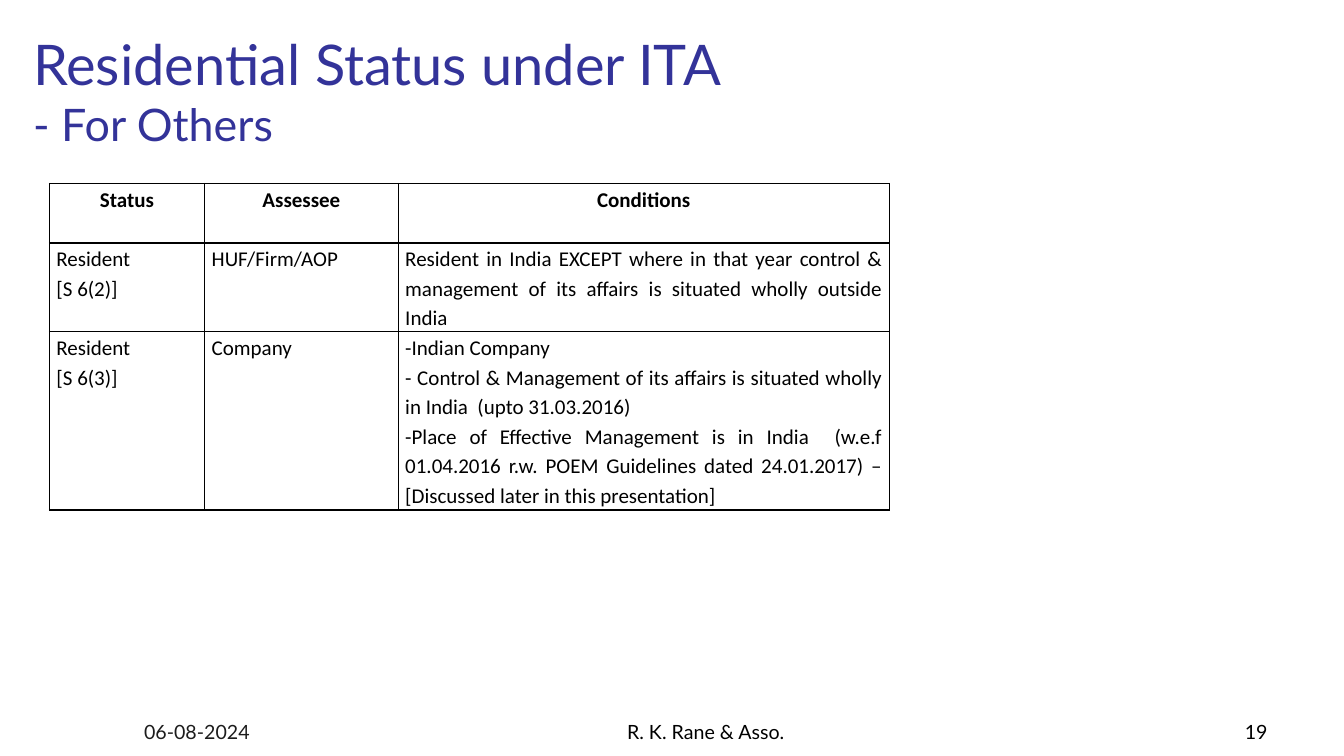
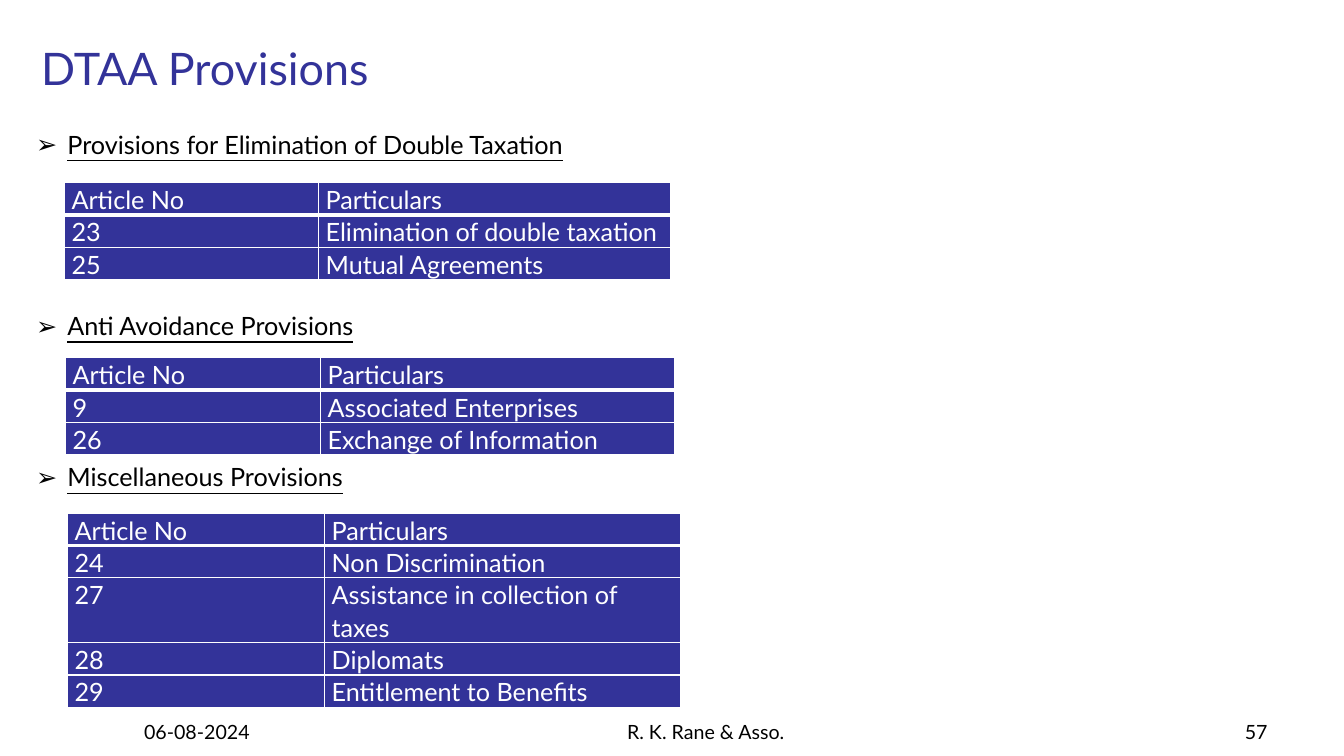
from lxml import etree
from pptx import Presentation
from pptx.dml.color import RGBColor
from pptx.enum.text import MSO_ANCHOR, PP_ALIGN
from pptx.oxml.ns import qn
from pptx.util import Pt

PX = 9144
LEFT, MID, RIGHT, FULL = PP_ALIGN.LEFT, PP_ALIGN.CENTER, PP_ALIGN.RIGHT, PP_ALIGN.JUSTIFY
TOP, BASE = MSO_ANCHOR.TOP, MSO_ANCHOR.BOTTOM


class Theme:
    blue = "333399"
    black = "000000"
    dark = "1C1C1C"
    white = "FFFFFF"
    font = "Lato"
    plain = "Calibri"
    title = 40
    sub = 32
    body = 18
    cell = 15
    foot = 14


def write(frame, text, size, ink, align=LEFT, font=Theme.font, bold=False, space=None, mark=""):
    frame.text = text
    for para in frame.paragraphs:
        para.alignment = align
        if space:
            para.line_spacing = space
        if mark:
            props = para._p.get_or_add_pPr()
            etree.SubElement(props, qn("a:buFont"), typeface=font)
            etree.SubElement(props, qn("a:buChar"), char=mark)
        for run in para.runs:
            run.font.size = Pt(size)
            run.font.name = font
            run.font.bold = bold
            run.font.color.rgb = RGBColor.from_string(ink)


def grid(slide, left, top, cols, rows, cells, line, base, fill=None, **style):
    shape = slide.shapes.add_table(len(rows), len(cols), left * PX, top * PX,
                                   sum(cols) * PX, sum(rows) * PX)
    table = shape.table
    table.first_row = table.horz_banding = False
    for col, wide in zip(table.columns, cols):
        col.width = wide * PX
    for row, high in zip(table.rows, rows):
        row.height = high * PX
    for r, texts in enumerate(cells):
        for c, text in enumerate(texts):
            cell = table.cell(r, c)
            cell.margin_left = cell.margin_right = 7 * PX
            cell.margin_top = cell.margin_bottom = 0
            props = cell._tc.get_or_add_tcPr()
            for side in "LRTB":
                heavy = side == "B" and r == 0 or side == "T" and r == 1
                edge = etree.SubElement(props, qn("a:ln" + side),
                                        w=str(Pt(base if heavy else 1)))
                paint = etree.SubElement(edge, qn("a:solidFill"))
                etree.SubElement(paint, qn("a:srgbClr"), val=line)
            if fill:
                cell.fill.solid()
                cell.fill.fore_color.rgb = RGBColor.from_string(fill)
            else:
                cell.fill.background()
            write(cell.text_frame, text, **style)
    return table


deck = Presentation()
deck.slide_width, deck.slide_height = 1333 * PX, 750 * PX
blank = deck.slide_layouts[6]

pages = [
    ("19", Theme.dark, (23, 24, 1244, 142), "Residential Status under ITA\n- For Others", Theme.title),
    ("57", Theme.black, (31, 35, 575, 58), "DTAA Provisions", Theme.sub),
]
slides = []
for num, ink, spot, title, size in pages:
    slide = deck.slides.add_slide(blank)
    slides.append(slide)
    boxes = [
        (spot, title, size, Theme.blue, LEFT, TOP),
        ((133, 692, 278, 50), "06-08-2024", Theme.foot, ink, LEFT, BASE),
        ((489, 692, 422, 50), "R. K. Rane & Asso.", Theme.foot, Theme.black, MID, BASE),
        ((989, 692, 278, 50), num, Theme.foot, Theme.black, RIGHT, BASE),
    ]
    for place, text, size, tint, align, anchor in boxes:
        frame = slide.shapes.add_textbox(*[n * PX for n in place]).text_frame
        frame.word_wrap = True
        frame.vertical_anchor = anchor
        write(frame, text, size, tint, align)

status, treaty = slides

head = status.shapes[0].text_frame
head.paragraphs[1].runs[0].font.size = Pt(Theme.sub)

rules = [
    ("Status", "Assessee", "Conditions"),
    ("Resident\n[S 6(2)]", "HUF/Firm/AOP",
     "Resident in India EXCEPT where in that year control & management of its affairs "
     "is situated wholly outside India"),
    ("Resident\n[S 6(3)]", "Company", ""),
]
tests = (
    "Indian Company\n"
    " Control & Management of its affairs is situated wholly in India  (upto 31.03.2016)\n"
    "Place of Effective Management is in India  (w.e.f 01.04.2016 r.w. POEM Guidelines "
    "dated 24.01.2017) – [Discussed later in this presentation]"
)
look = dict(size=Theme.cell, ink=Theme.black, font=Theme.plain, space=1.15)
table = grid(status, 49, 182, (154, 192, 487), (59, 88, 177), rules,
             Theme.black, 1, align=FULL, **look)
for c, text in enumerate(rules[0]):
    write(table.cell(0, c).text_frame, text, align=MID, bold=True, **look)
write(table.cell(2, 2).text_frame, tests, align=FULL, mark="-", **look)

parts = [
    ("Provisions for Elimination of Double Taxation", 0, 64, 181, (252, 349),
     [("23", "Elimination of double taxation"), ("25", "Mutual Agreements")]),
    ("Anti Avoidance Provisions", 5, 65, 355, (253, 351),
     [("9", "Associated Enterprises"), ("26", "Exchange of Information")]),
    ("Miscellaneous Provisions", 4, 67, 509, (255, 353),
     [("24", "Non Discrimination"), ("27", "Assistance in collection of taxes"),
      ("28", "Diplomats"), ("29", "Entitlement to Benefits")]),
]
frame = treaty.shapes.add_textbox(26 * PX, 123 * PX, 1161 * PX, 420 * PX).text_frame
frame.word_wrap = True
write(frame, "\n".join(part[0] for part in parts), Theme.body, Theme.black, mark="➢")
for para, (name, gap, left, top, cols, items) in zip(frame.paragraphs, parts):
    props = para._p.get_or_add_pPr()
    props.set("marL", str(31 * PX))
    props.set("indent", str(-31 * PX))
    if gap:
        para.space_before = Pt(gap * Theme.body * 1.2)
    para.runs[0].font.underline = True
    cells = [("Article No", "Particulars")] + items
    rows = [64 if num == "27" else 32 for num, text in cells]
    grid(treaty, left, top, cols, rows, cells, Theme.white, 3, Theme.blue,
         size=Theme.body, ink=Theme.white, space=1.07)

deck.save("out.pptx")
